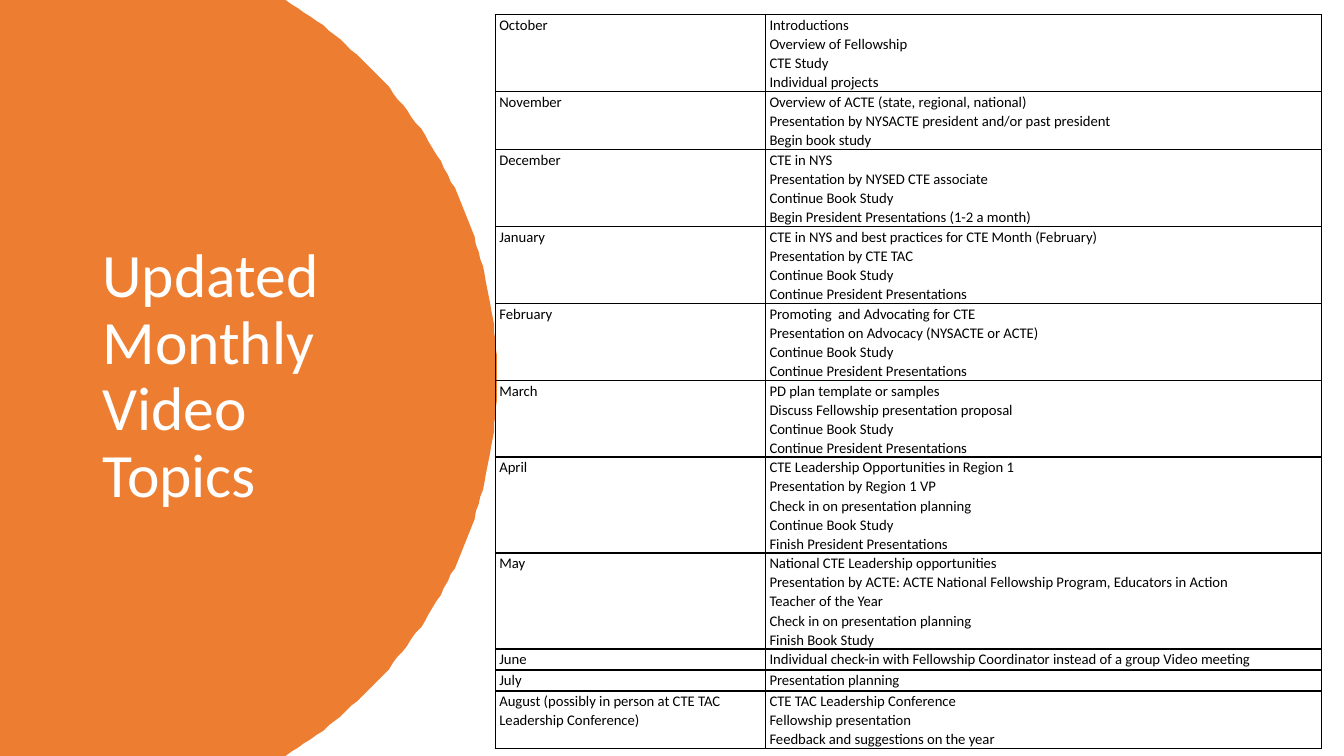
from dataclasses import dataclass
from math import asin, cos, sin

from lxml.etree import SubElement
from pptx import Presentation
from pptx.dml.color import RGBColor
from pptx.enum.text import MSO_ANCHOR, PP_ALIGN
from pptx.oxml.ns import qn
from pptx.util import Pt


@dataclass(frozen=True)
class Theme:
    accent: str = "ED7D31"
    title: str = "FFFFFF"
    ink: str = "000000"
    font: str = "Calibri"
    title_size: float = 44
    table_size: float = 10.5


THEME = Theme()
WIDTH, HEIGHT = 960, 540

TITLE = "Updated Monthly Video Topics"
SCHEDULE = [
    ("October", ["Introductions", "Overview of Fellowship", "CTE Study",
                 "Individual projects"]),
    ("November", ["Overview of ACTE (state, regional, national)",
                  "Presentation by NYSACTE president and/or past president",
                  "Begin book study"]),
    ("December", ["CTE in NYS", "Presentation by NYSED CTE associate",
                  "Continue Book Study",
                  "Begin President Presentations (1-2 a month)"]),
    ("January", ["CTE in NYS and best practices for CTE Month (February)",
                 "Presentation by CTE TAC", "Continue Book Study",
                 "Continue President Presentations"]),
    ("February", ["Promoting  and Advocating for CTE",
                  "Presentation on Advocacy (NYSACTE or ACTE)",
                  "Continue Book Study", "Continue President Presentations"]),
    ("March", ["PD plan template or samples",
               "Discuss Fellowship presentation proposal",
               "Continue Book Study", "Continue President Presentations"]),
    ("April", ["CTE Leadership Opportunities in Region 1",
               "Presentation by Region 1 VP",
               "Check in on presentation planning", "Continue Book Study",
               "Finish President Presentations"]),
    ("May", ["National CTE Leadership opportunities",
             "Presentation by ACTE: ACTE National Fellowship Program, "
             "Educators in Action",
             "Teacher of the Year", "Check in on presentation planning",
             "Finish Book Study"]),
    ("June", ["Individual check-in with Fellowship Coordinator instead of "
              "a group Video meeting"]),
    ("July", ["Presentation planning"]),
    ("August (possibly in person at CTE TAC Leadership Conference)",
     ["CTE TAC Leadership Conference", "Fellowship presentation",
      "Feedback and suggestions on the year"]),
]


def set_all(target, values):
    for name, value in values.items():
        setattr(target, name, value)


def style_paragraph(p, size, color, spacing):
    set_all(p, {"alignment": PP_ALIGN.LEFT, "line_spacing": spacing,
                "space_before": Pt(0)})
    for r in p.runs:
        set_all(r.font, {"name": THEME.font, "size": Pt(size)})
        r.font.color.rgb = RGBColor.from_string(color)


def add_title(s, text, left, top, width, height):
    sp = s.shapes.title
    set_all(sp, {"left": Pt(left), "top": Pt(top),
                 "width": Pt(width), "height": Pt(height)})
    tf = sp.text_frame
    set_all(tf, {"text": text, "word_wrap": True,
                 "vertical_anchor": MSO_ANCHOR.MIDDLE})
    style_paragraph(tf.paragraphs[0], THEME.title_size, THEME.title, 0.9)
    return sp


def add_round_panel(s, center_x, radius, steps=120):
    """Left panel whose right side is an arc spanning the slide height."""
    half = asin(HEIGHT / 2 / radius)
    angles = [-half + 2 * half * i / steps for i in range(steps + 1)]
    arc = [(center_x + radius * cos(a), HEIGHT / 2 + radius * sin(a))
           for a in angles]
    builder = s.shapes.build_freeform(0, 0, scale=Pt(1))
    builder.add_line_segments(arc + [(0, HEIGHT)], close=True)
    sp = builder.convert_to_shape()
    sp.shadow.inherit = False
    sp.fill.solid()
    sp.fill.fore_color.rgb = RGBColor.from_string(THEME.accent)
    sp.line.fill.background()
    return sp


def add_borders(cell):
    tc_pr = cell._tc.get_or_add_tcPr()
    for side in ("lnL", "lnR", "lnT", "lnB"):
        line = SubElement(tc_pr, qn(f"a:{side}"), w=str(Pt(1)))
        fill = SubElement(line, qn("a:solidFill"))
        SubElement(fill, qn("a:srgbClr"), val=THEME.ink)


def fill_cell(cell, lines):
    set_all(cell, {"margin_left": Pt(3), "margin_right": Pt(3),
                   "margin_top": Pt(0.5), "margin_bottom": Pt(0)})
    add_borders(cell)
    cell.fill.background()
    cell.text = "\n".join(lines)
    for i, p in enumerate(cell.text_frame.paragraphs):
        style_paragraph(p, THEME.table_size, THEME.ink, 1.07)
        if i:  # hanging indent below the first topic
            p_pr = p._p.get_or_add_pPr()
            p_pr.set("marL", str(Pt(27)))
            p_pr.set("indent", str(-Pt(27)))


def add_schedule(s, left, top, col_widths):
    heights = [max(15, 12.2 * len(topics) + 1.6) for _, topics in SCHEDULE]
    frame = s.shapes.add_table(len(SCHEDULE), len(col_widths), Pt(left), Pt(top),
                               Pt(sum(col_widths)), Pt(sum(heights)))
    table = frame.table
    set_all(table, {"first_row": False, "horz_banding": False})
    for column, width in zip(table.columns, col_widths):
        column.width = Pt(width)
    for i, (month, topics) in enumerate(SCHEDULE):
        table.rows[i].height = Pt(heights[i])
        fill_cell(table.cell(i, 0), [month])
        fill_cell(table.cell(i, 1), topics)


def main():
    prs = Presentation()
    set_all(prs, {"slide_width": Pt(WIDTH), "slide_height": Pt(HEIGHT)})
    s = prs.slides.add_slide(prs.slide_layouts[5])

    # Title on the round panel
    title = add_title(s, TITLE, 66, 50.5, 232.5, 438.5)
    panel = add_round_panel(s, center_x=38.2, radius=316.8)
    title.element.addprevious(panel.element)

    # Monthly schedule
    add_schedule(s, 353.7, 10.5, [193, 397.5])

    prs.save("out.pptx")


if __name__ == "__main__":
    main()
